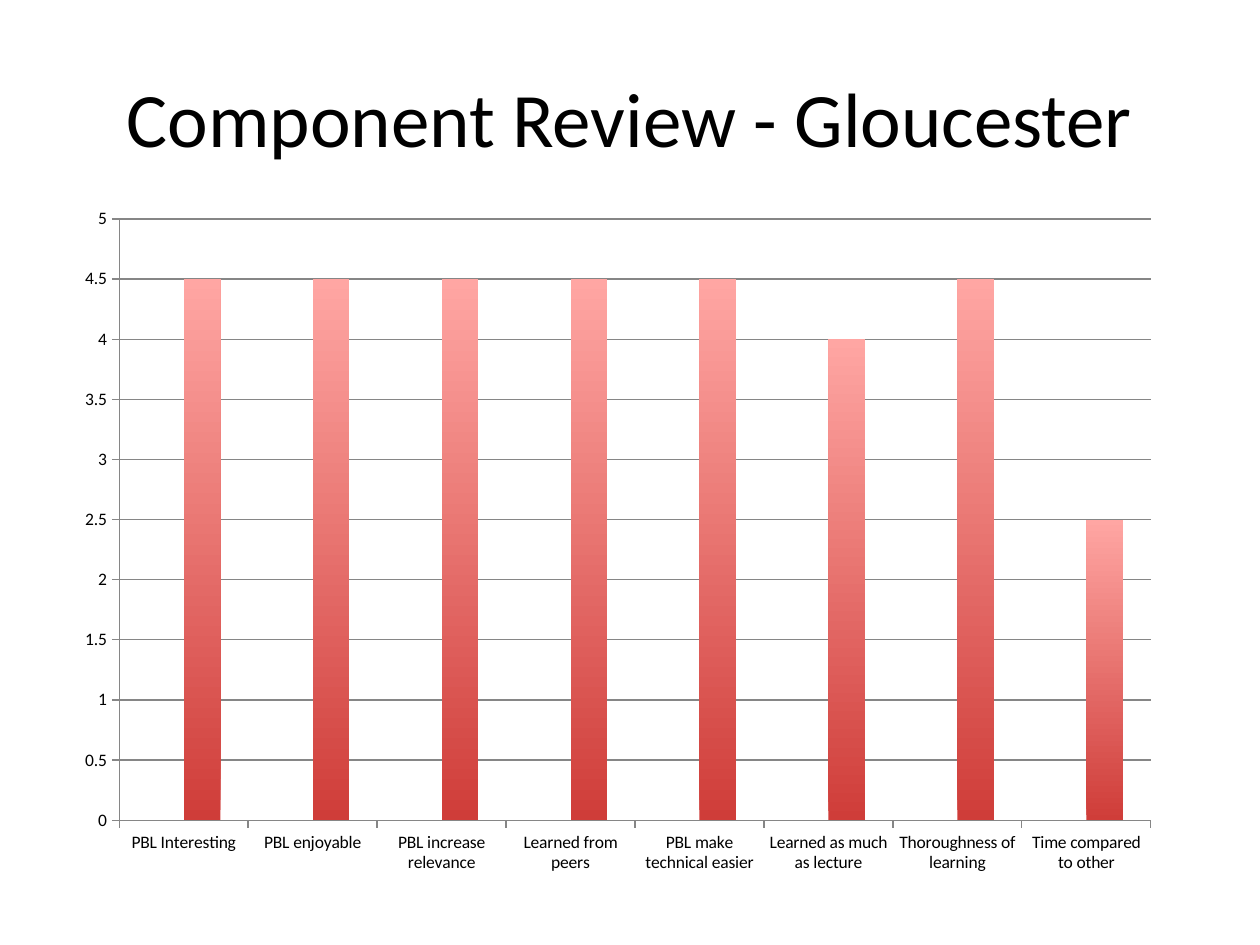
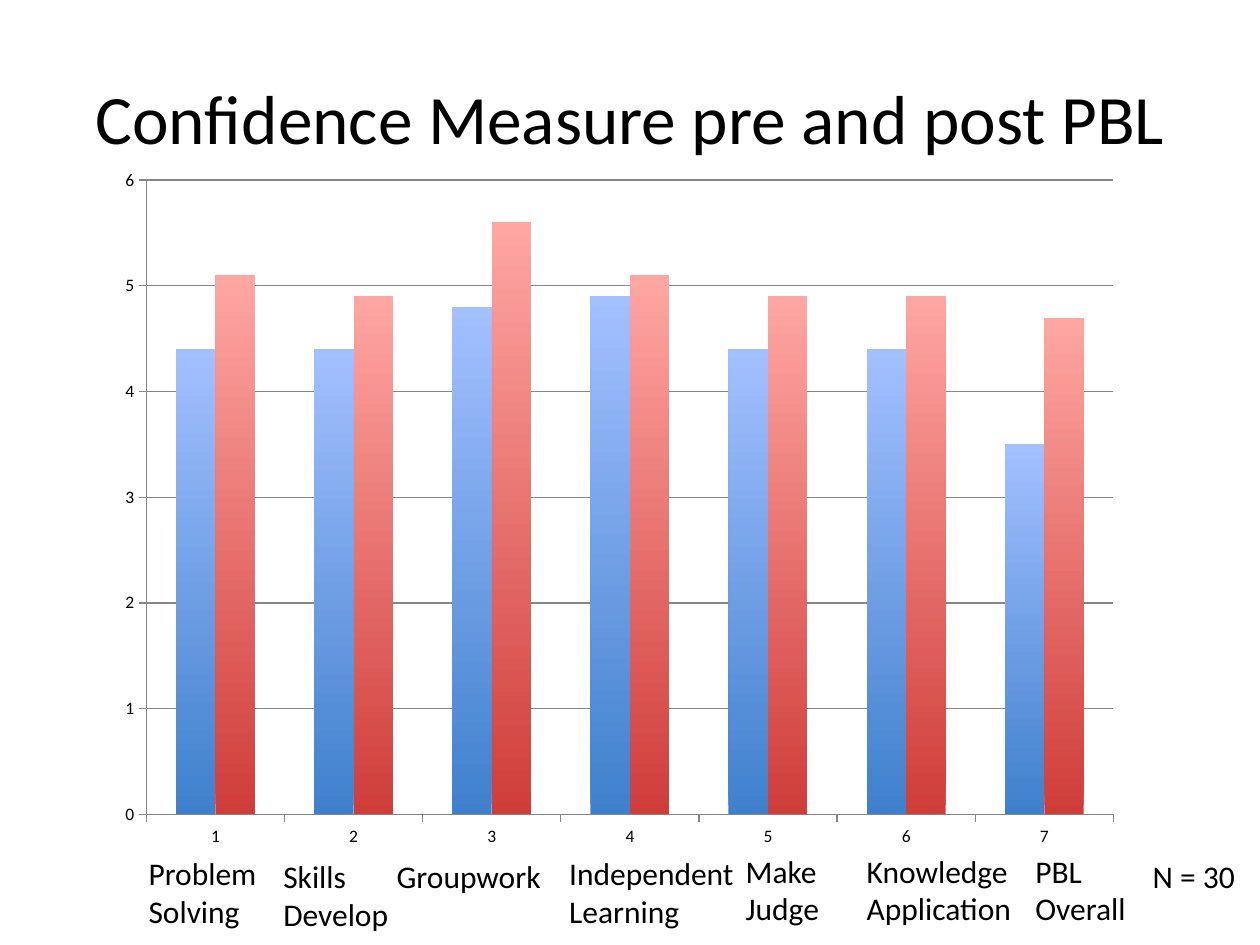
from dataclasses import dataclass

from pptx import Presentation
from pptx.chart.data import CategoryChartData
from pptx.dml.color import RGBColor
from pptx.enum.chart import XL_CHART_TYPE, XL_TICK_MARK
from pptx.enum.text import MSO_ANCHOR, MSO_AUTO_SIZE, PP_ALIGN
from pptx.slide import Slide
from pptx.util import Pt

CLUSTERED = XL_CHART_TYPE.COLUMN_CLUSTERED
TICK_OUTSIDE, TICK_NONE = XL_TICK_MARK.OUTSIDE, XL_TICK_MARK.NONE
MIDDLE = MSO_ANCHOR.MIDDLE
FIT_SHAPE, FIT_NONE = MSO_AUTO_SIZE.SHAPE_TO_FIT_TEXT, MSO_AUTO_SIZE.NONE
LEFT, CENTER = PP_ALIGN.LEFT, PP_ALIGN.CENTER
TITLE_ONLY = 5


@dataclass(frozen=True)
class Theme:
    font: str = "Calibri"
    text: RGBColor = RGBColor(0, 0, 0)
    axis: RGBColor = RGBColor(0x86, 0x86, 0x86)
    # One (bottom, top) pair for each series
    bars: tuple = (
        (RGBColor(0x3F, 0x80, 0xCD), RGBColor(0xA3, 0xC0, 0xFF)),
        (RGBColor(0xCF, 0x3D, 0x39), RGBColor(0xFF, 0xA6, 0xA3)),
    )
    label_size: float = 18
    chart_size: float = 10
    line_width: float = 0.75


@dataclass(frozen=True)
class Box:
    left: float
    top: float
    width: float
    height: float

    def lengths(self) -> tuple:
        return Pt(self.left), Pt(self.top), Pt(self.width), Pt(self.height)


@dataclass(frozen=True)
class BarChart:
    box: Box
    categories: tuple
    before: tuple
    after: tuple
    maximum: float
    step: float


@dataclass(frozen=True)
class Label:
    lines: tuple
    box: Box


THEME = Theme()
TITLE_BOX = Box(36, 21.6, 648, 90)

REVIEW = BarChart(
    Box(36, 111.6, 634.3, 394.6),
    ("PBL Interesting", "PBL enjoyable", "PBL increase relevance",
     "Learned from peers", "PBL make technical easier",
     "Learned as much as lecture", "Thoroughness of learning",
     "Time compared to other"),
    (None,) * 8,
    (4.5, 4.5, 4.5, 4.5, 4.5, 4, 4.5, 2.5),
    maximum=5, step=0.5,
)
CONFIDENCE = BarChart(
    Box(59.8, 89.3, 588.2, 402.5),
    tuple(str(number) for number in range(1, 8)),
    (4.4, 4.4, 4.8, 4.9, 4.4, 4.4, 3.5),
    (5.1, 4.9, 5.6, 5.1, 4.9, 4.9, 4.7),
    maximum=6, step=1,
)
CONFIDENCE_LABELS = (
    Label(("Problem", "Solving"), Box(77.8, 484.6, 77, 51)),
    Label(("Skills", "Develop"), Box(154.8, 486, 75.6, 51)),
    Label(("Groupwork",), Box(219.6, 486, 98.6, 29)),
    Label(("Independent", "Learning"), Box(318.2, 484.6, 109.4, 51)),
    Label(("Make", "Judge"), Box(419, 483.1, 56.9, 51)),
    Label(("Knowledge", "Application"), Box(488.2, 483.1, 97.9, 51)),
    Label(("PBL", "Overall"), Box(584.6, 483.1, 67, 51)),
    Label(("N = 30",), Box(651.6, 486, 61.9, 29)),
)


def write_lines(text_frame, lines: tuple, size: float, alignment) -> None:
    """Write one paragraph, holding one run, for each line."""
    for index, line in enumerate(lines):
        paragraph = text_frame.paragraphs[0] if index == 0 else text_frame.add_paragraph()
        paragraph.alignment = alignment
        run = paragraph.add_run()
        run.text = line
        run.font.name = THEME.font
        run.font.size = Pt(size)
        run.font.color.rgb = THEME.text


def add_titled_slide(presentation, title: str, size: float) -> Slide:
    slide = presentation.slides.add_slide(presentation.slide_layouts[TITLE_ONLY])
    shape = slide.shapes.title
    shape.left, shape.top, shape.width, shape.height = TITLE_BOX.lengths()
    shape.text_frame.vertical_anchor = MIDDLE
    shape.text_frame.auto_size = FIT_NONE
    write_lines(shape.text_frame, (title,), size, CENTER)
    return slide


def style_line(line) -> None:
    line.color.rgb = THEME.axis
    line.width = Pt(THEME.line_width)


def add_bar_chart(slide: Slide, content: BarChart) -> None:
    data = CategoryChartData()
    data.categories = content.categories
    data.add_series("Series 1", content.before)
    data.add_series("Series 2", content.after)
    chart = slide.shapes.add_chart(CLUSTERED, *content.box.lengths(), data).chart
    chart.has_legend = False
    chart.has_title = False
    chart.font.name = THEME.font
    chart.font.size = Pt(THEME.chart_size)
    chart.font.color.rgb = THEME.text

    # Axes and gridlines
    for axis in (chart.category_axis, chart.value_axis):
        axis.major_tick_mark = TICK_OUTSIDE
        axis.minor_tick_mark = TICK_NONE
        style_line(axis.format.line)
    value_axis = chart.value_axis
    value_axis.minimum_scale = 0
    value_axis.maximum_scale = content.maximum
    value_axis.major_unit = content.step
    value_axis.has_major_gridlines = True
    style_line(value_axis.major_gridlines.format.line)

    # Bars shade upwards from dark to light
    plot = chart.plots[0]
    plot.gap_width = 150
    plot.overlap = 0
    plot.vary_by_categories = False
    for series, colors in zip(plot.series, THEME.bars):
        series.invert_if_negative = False
        fill = series.format.fill
        fill.gradient()
        fill.gradient_angle = 90
        for stop, color in zip(fill.gradient_stops, colors):
            stop.color.rgb = color


def add_label(slide: Slide, label: Label) -> None:
    text_frame = slide.shapes.add_textbox(*label.box.lengths()).text_frame
    text_frame.word_wrap = False
    text_frame.auto_size = FIT_SHAPE
    write_lines(text_frame, label.lines, THEME.label_size, LEFT)


def main() -> None:
    presentation = Presentation()
    presentation.slide_width, presentation.slide_height = Pt(720), Pt(540)

    # Component review
    slide = add_titled_slide(presentation, "Component Review - Gloucester", 44)
    add_bar_chart(slide, REVIEW)

    # Confidence before and after
    slide = add_titled_slide(presentation, "Confidence Measure pre and post PBL", 39.6)
    add_bar_chart(slide, CONFIDENCE)
    for label in CONFIDENCE_LABELS:
        add_label(slide, label)

    presentation.save("out.pptx")


if __name__ == "__main__":
    main()
